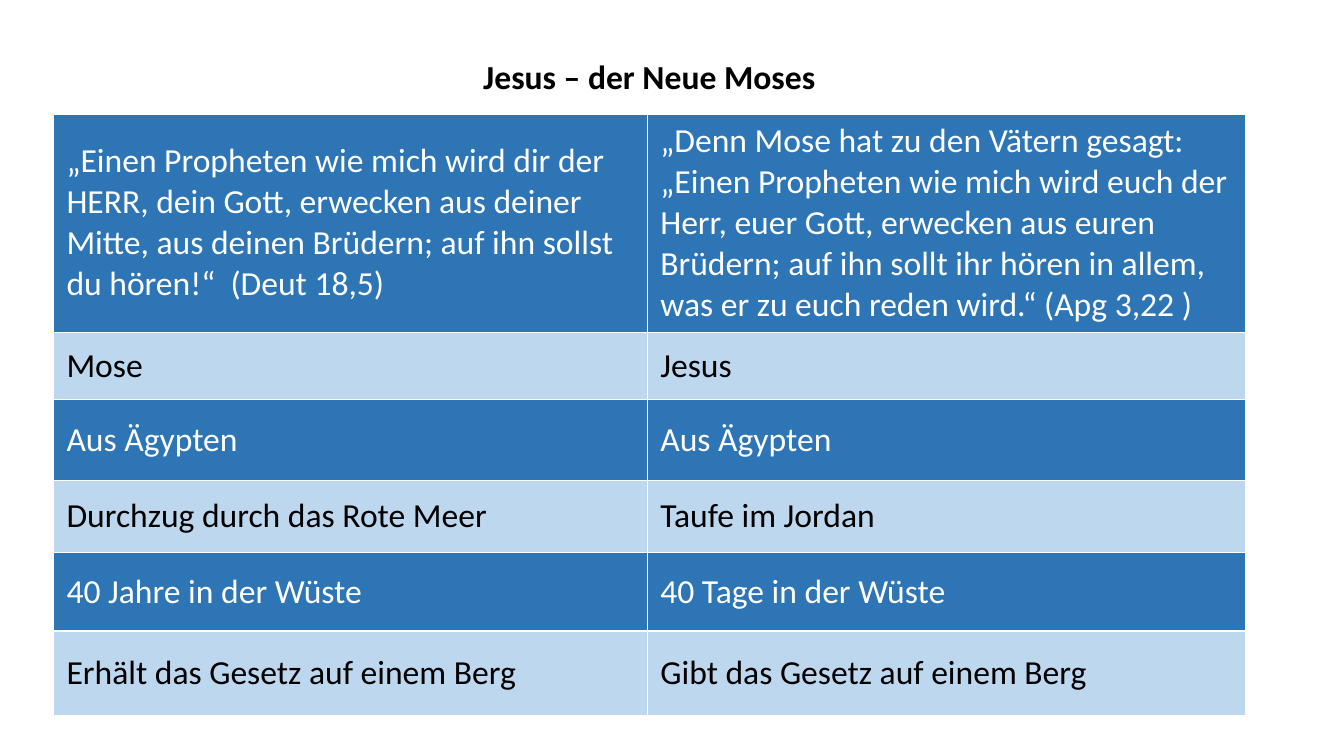
"""Build a slide with a table comparing Moses and Jesus, the new Moses."""
from dataclasses import dataclass

from lxml.etree import SubElement
from pptx import Presentation
from pptx.dml.color import RGBColor
from pptx.enum.text import MSO_ANCHOR, PP_ALIGN
from pptx.oxml.ns import qn
from pptx.util import Inches, Pt


@dataclass(frozen=True)
class Theme:
    font: str = "Calibri"
    size: Pt = Pt(24)
    white: RGBColor = RGBColor(0xFF, 0xFF, 0xFF)
    black: RGBColor = RGBColor(0x00, 0x00, 0x00)
    dark_blue: RGBColor = RGBColor(0x2E, 0x75, 0xB6)
    light_blue: RGBColor = RGBColor(0xBD, 0xD7, 0xEE)
    border: Pt = Pt(1)
    title_border: Pt = Pt(3)


theme = Theme()


def set_borders(cell, bottom_width):
    properties = cell._tc.get_or_add_tcPr()
    widths = {"a:lnL": theme.border, "a:lnR": theme.border,
              "a:lnT": theme.border, "a:lnB": bottom_width}
    for side, width in widths.items():
        line = SubElement(properties, qn(side), w=str(width))
        color = SubElement(SubElement(line, qn("a:solidFill")), qn("a:srgbClr"))
        color.set("val", str(theme.white))


def format_cell(cell, text, fill, color, bottom_width=theme.border):
    set_borders(cell, bottom_width)
    cell.fill.solid()
    cell.fill.fore_color.rgb = fill
    cell.vertical_anchor = MSO_ANCHOR.MIDDLE
    cell.margin_left = cell.margin_right = Inches(0.13)
    cell.margin_top = cell.margin_bottom = 0
    cell.text = text
    font = cell.text_frame.paragraphs[0].font
    font.name = theme.font
    font.size = theme.size
    font.bold = False
    font.color.rgb = color


comparisons = [
    ("„Einen Propheten wie mich wird dir der HERR, dein Gott, erwecken aus "
     "deiner Mitte, aus deinen Brüdern; auf ihn sollst du hören!“  (Deut 18,5)",
     "„Denn Mose hat zu den Vätern gesagt: „Einen Propheten wie mich wird euch "
     "der Herr, euer Gott, erwecken aus euren Brüdern; auf ihn sollt ihr hören "
     "in allem, was er zu euch reden wird.“ (Apg 3,22 )"),
    ("Mose", "Jesus"),
    ("Aus Ägypten", "Aus Ägypten"),
    ("Durchzug durch das Rote Meer", "Taufe im Jordan"),
    ("40 Jahre in der Wüste", "40 Tage in der Wüste"),
    ("Erhält das Gesetz auf einem Berg", "Gibt das Gesetz auf einem Berg"),
]
column_widths = [5.89, 5.93]
row_heights = [0.69, 2.18, 0.66, 0.81, 0.71, 0.78, 0.84]
row_styles = [(theme.dark_blue, theme.white), (theme.light_blue, theme.black)]

presentation = Presentation()
presentation.slide_width = Inches(13.33)
presentation.slide_height = Inches(7.5)
slide = presentation.slides.add_slide(presentation.slide_layouts[6])

table = slide.shapes.add_table(
    len(row_heights), len(column_widths), Inches(0.53), Inches(0.43),
    Inches(sum(column_widths)), Inches(sum(row_heights))).table
for column, width in zip(table.columns, column_widths):
    column.width = Inches(width)
for row, height in zip(table.rows, row_heights):
    row.height = Inches(height)

heading = table.cell(0, 0)
heading.merge(table.cell(0, 1))
format_cell(heading, "Jesus – der Neue Moses", theme.white, theme.black,
            theme.title_border)
heading_line = heading.text_frame.paragraphs[0]
heading_line.alignment = PP_ALIGN.CENTER
heading_line.font.bold = True

for row_number, comparison in enumerate(comparisons, start=1):
    fill, color = row_styles[(row_number - 1) % 2]
    for column_number, statement in enumerate(comparison):
        format_cell(table.cell(row_number, column_number), statement, fill, color)

presentation.save("out.pptx")
